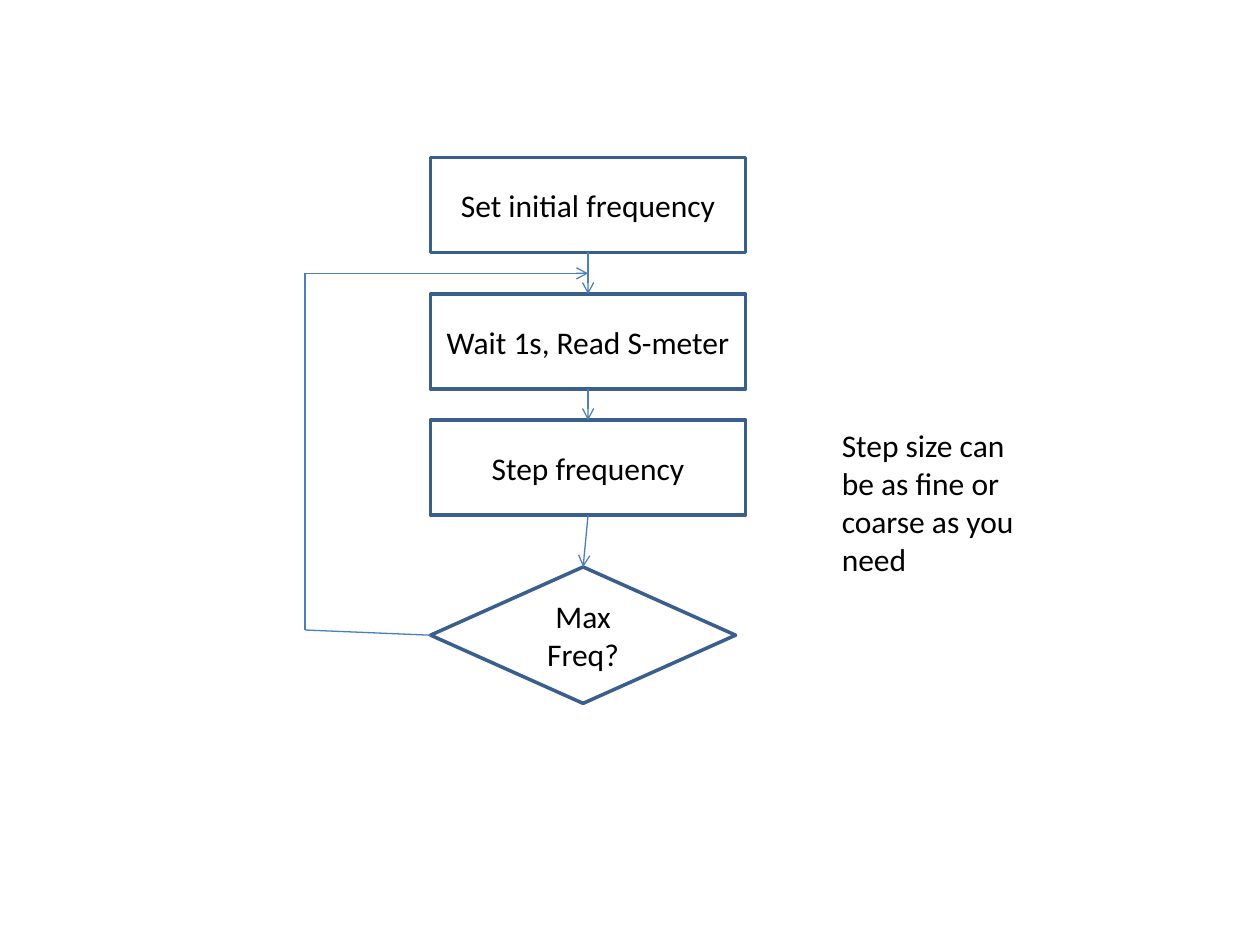
"""Build a flowchart slide of a frequency sweep loop."""
from dataclasses import dataclass

from lxml import etree
from pptx import Presentation
from pptx import util as u
from pptx.dml.color import RGBColor
from pptx.enum import shapes, text
from pptx.oxml import ns

Point = tuple[float, float]


@dataclass(frozen=True)
class Theme:
    font: str = "Calibri"
    size: float = 18
    ink: str = "000000"
    border: str = "3A5F8C"
    border_width: float = 2
    arrow: str = "4B7EBC"
    arrow_width: float = 0.75


@dataclass(frozen=True)
class Node:
    label: str
    top: float
    left: float = 8.68
    width: float = 6.35
    height: float = 1.91
    kind: shapes.MSO_SHAPE = shapes.MSO_SHAPE.RECTANGLE

    @property
    def top_mid(self) -> Point:
        return self.left + self.width / 2, self.top

    @property
    def bottom_mid(self) -> Point:
        return self.left + self.width / 2, self.top + self.height

    @property
    def left_mid(self) -> Point:
        return self.left, self.top + self.height / 2


THEME = Theme()
START = Node("Set initial frequency", 3.18)
READ = Node("Wait 1s, Read S-meter", 5.93)
STEP = Node("Step frequency", 8.47)
CHECK = Node("Max Freq?", 11.43, width=6.15, height=2.75,
             kind=shapes.MSO_SHAPE.FLOWCHART_DECISION)
NODES = (START, READ, STEP, CHECK)
LOOP_X, LOOP_BOTTOM = 6.15, 12.7


def style_text(tf, align: text.PP_ALIGN) -> None:
    """Apply the theme's type to every run of a wrapped text frame."""
    tf.word_wrap = True
    for p in tf.paragraphs:
        p.alignment = align
        for r in p.runs:
            r.font.name = THEME.font
            r.font.size = u.Pt(THEME.size)
            r.font.color.rgb = RGBColor.from_string(THEME.ink)


def add_node(s, node: Node) -> None:
    """Draw one outlined flowchart step."""
    sp = s.shapes.add_shape(node.kind, u.Cm(node.left), u.Cm(node.top),
                            u.Cm(node.width), u.Cm(node.height))
    sp.shadow.inherit = False
    sp.fill.background()
    sp.line.color.rgb = RGBColor.from_string(THEME.border)
    sp.line.width = u.Pt(THEME.border_width)
    tf = sp.text_frame
    tf.text = node.label
    tf.vertical_anchor = text.MSO_ANCHOR.MIDDLE
    style_text(tf, text.PP_ALIGN.CENTER)


def add_line(s, start: Point, end: Point, arrow: bool = True) -> None:
    """Draw a straight line, with an open arrowhead at its end if asked."""
    cx = s.shapes.add_connector(shapes.MSO_CONNECTOR.STRAIGHT,
                                *(u.Cm(v) for v in start + end))
    cx.line.color.rgb = RGBColor.from_string(THEME.arrow)
    cx.line.width = u.Pt(THEME.arrow_width)
    if arrow:
        etree.SubElement(cx.line._get_or_add_ln(), ns.qn("a:tailEnd"), type="arrow")
    etree.SubElement(cx._element.spPr, ns.qn("a:effectLst"))


def add_note(s, label: str, left: float, top: float, width: float, height: float) -> None:
    """Draw a left-aligned side note."""
    tf = s.shapes.add_textbox(u.Cm(left), u.Cm(top), u.Cm(width), u.Cm(height)).text_frame
    tf.text = label
    tf.auto_size = text.MSO_AUTO_SIZE.SHAPE_TO_FIT_TEXT
    style_text(tf, text.PP_ALIGN.LEFT)


def main() -> None:
    """Assemble and save the slide."""
    prs = Presentation()
    prs.slide_width, prs.slide_height = u.Cm(25.4), u.Cm(19.05)
    s = prs.slides.add_slide(prs.slide_layouts[6])

    for node in NODES:
        add_node(s, node)
    for upper, lower in zip(NODES, NODES[1:]):
        add_line(s, upper.bottom_mid, lower.top_mid)

    merge_x, start_bottom = START.bottom_mid
    merge_y = (start_bottom + READ.top) / 2
    add_line(s, CHECK.left_mid, (LOOP_X, LOOP_BOTTOM), arrow=False)
    add_line(s, (LOOP_X, merge_y), (LOOP_X, LOOP_BOTTOM), arrow=False)
    add_line(s, (LOOP_X, merge_y), (merge_x, merge_y))

    add_note(s, "Step size can be as fine or coarse as you need", 16.72, STEP.top, 4.45, 3.33)
    prs.save("out.pptx")


if __name__ == "__main__":
    main()
